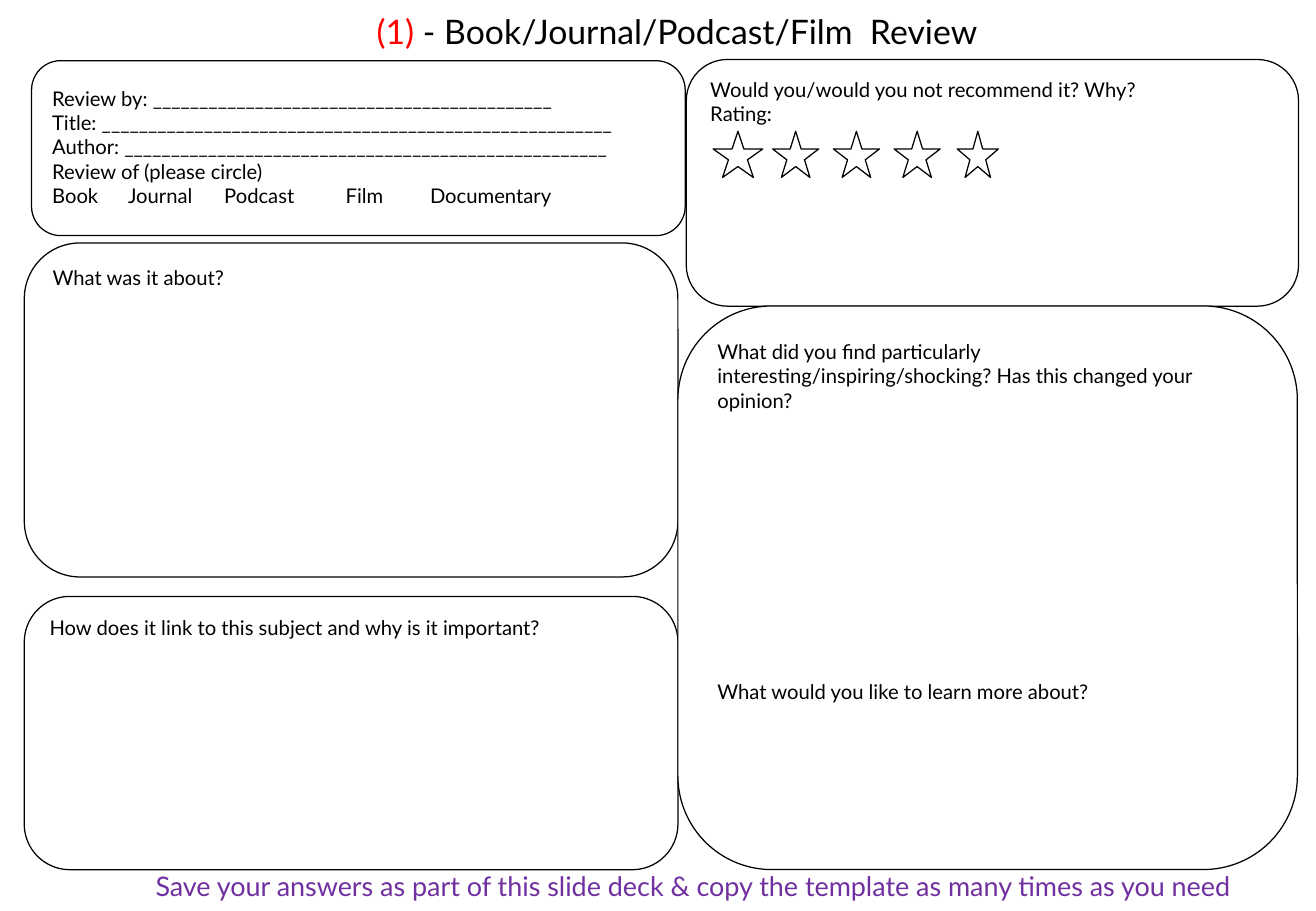
from lxml.etree import SubElement
from pptx import Presentation
from pptx.dml.color import RGBColor
from pptx.enum.shapes import MSO_SHAPE
from pptx.enum.text import MSO_ANCHOR, PP_ALIGN
from pptx.oxml.ns import qn
from pptx.util import Pt

FONT, BLACK, WHITE, RED, PURPLE = "Lato", "000000", "FFFFFF", "FF0000", "7030A0"

QUESTION_PANELS = [
    ((406.8, 35.3, 362.9, 146.2), ["Would you/would you not recommend it? Why?", "Rating:"]),
    ((14.4, 353.5, 387.4, 162), ["How does it link to this subject and why is it important?"]),
    ((14.4, 144, 387.4, 198), ["What was it about?"]),
    ((401.8, 181.4, 367.2, 334.1), [
        "What did you find particularly interesting/inspiring/shocking? Has this changed your opinion?",
        "What would you like to learn more about?",
    ]),
]
LEARN_MORE_GAP = 158.4

TITLE_BOX = (180, 2.9, 442.8, 28.8)
TITLE_PARTS = [("(1)", RED), (" - Book/Journal/Podcast/Film  Review", BLACK)]

DETAILS_BOX = (23.8, 47.5, 378, 74.2)
DETAILS_FRAME = (18.7, 36, 387.4, 103.7)
BLANKS = [("Review by", 43), ("Title", 55), ("Author", 52)]
CIRCLE_PROMPT = "Review of (please circle)"
MEDIA = ["Book", "Journal", "Podcast", "Film", "Documentary"]
MEDIA_TABS = [45, 102, 174, 224]

STAR_TOP, STAR_HEIGHT = 77.8, 27.4
STARS = [(437.4, 29.5), (471.6, 27.4), (507.6, 27.4), (543.6, 27.4), (579.6, 24.5)]

FOOTER_BOX = (43, 512, 736, 26.6)
FOOTER = "Save your answers as part of this slide deck & copy the template as many times as you need"


def rgb(color):
    return RGBColor.from_string(color)


def add_panel(slide, kind, box, fill=WHITE, outlined=True):
    panel = slide.shapes.add_shape(kind, *map(Pt, box))
    panel.shadow.inherit = False
    if fill:
        panel.fill.solid()
        panel.fill.fore_color.rgb = rgb(fill)
    else:
        panel.fill.background()
    if outlined:
        panel.line.color.rgb = rgb(BLACK)
        panel.line.width = Pt(0.75)
    else:
        panel.line.fill.background()
    return panel


def style(font, size, color):
    font.name, font.size, font.color.rgb = FONT, Pt(size), rgb(color)


def write(shape, lines, size=12, color=BLACK, align=PP_ALIGN.LEFT):
    frame = shape.text_frame
    frame.word_wrap = True
    frame.vertical_anchor = MSO_ANCHOR.TOP
    frame.text = "\n".join(lines)
    for paragraph in frame.paragraphs:
        paragraph.alignment = align
        style(paragraph.font, size, color)
    return frame.paragraphs


def set_tabs(paragraph, stops):
    properties = paragraph._p.get_or_add_pPr()
    tabs = SubElement(properties, qn("a:tabLst"))
    properties.insert(0, tabs)
    for stop in stops:
        SubElement(tabs, qn("a:tab"), pos=str(Pt(stop)), algn="l")


def main():
    """Build the one-page review template."""
    deck = Presentation()
    deck.slide_width, deck.slide_height = Pt(780), Pt(540)
    slide = deck.slides.add_slide(deck.slide_layouts[6])
    rounded = MSO_SHAPE.FLOWCHART_ALTERNATE_PROCESS

    for box, questions in QUESTION_PANELS:
        prompts = write(add_panel(slide, rounded, box), questions)
    prompts[-1].space_before = Pt(LEARN_MORE_GAP)

    title = add_panel(slide, MSO_SHAPE.RECTANGLE, TITLE_BOX, outlined=False)
    heading = write(title, [""], 20, align=PP_ALIGN.CENTER)[0]
    for words, color in TITLE_PARTS:
        run = heading.add_run()
        run.text = words
        style(run.font, 20, color)

    details = add_panel(slide, MSO_SHAPE.RECTANGLE, DETAILS_BOX, outlined=False)
    blanks = [f"{label}: {'_' * length}" for label, length in BLANKS]
    fields = write(details, [*blanks, CIRCLE_PROMPT, "\t".join(MEDIA)])
    set_tabs(fields[-1], MEDIA_TABS)
    add_panel(slide, rounded, DETAILS_FRAME, fill=None)

    for centre, width in STARS:
        add_panel(slide, MSO_SHAPE.STAR_5_POINT, (centre - width / 2, STAR_TOP, width, STAR_HEIGHT))

    footer = slide.shapes.add_textbox(*map(Pt, FOOTER_BOX))
    write(footer, [FOOTER], 16, PURPLE, PP_ALIGN.CENTER)
    deck.save("out.pptx")


if __name__ == "__main__":
    main()
